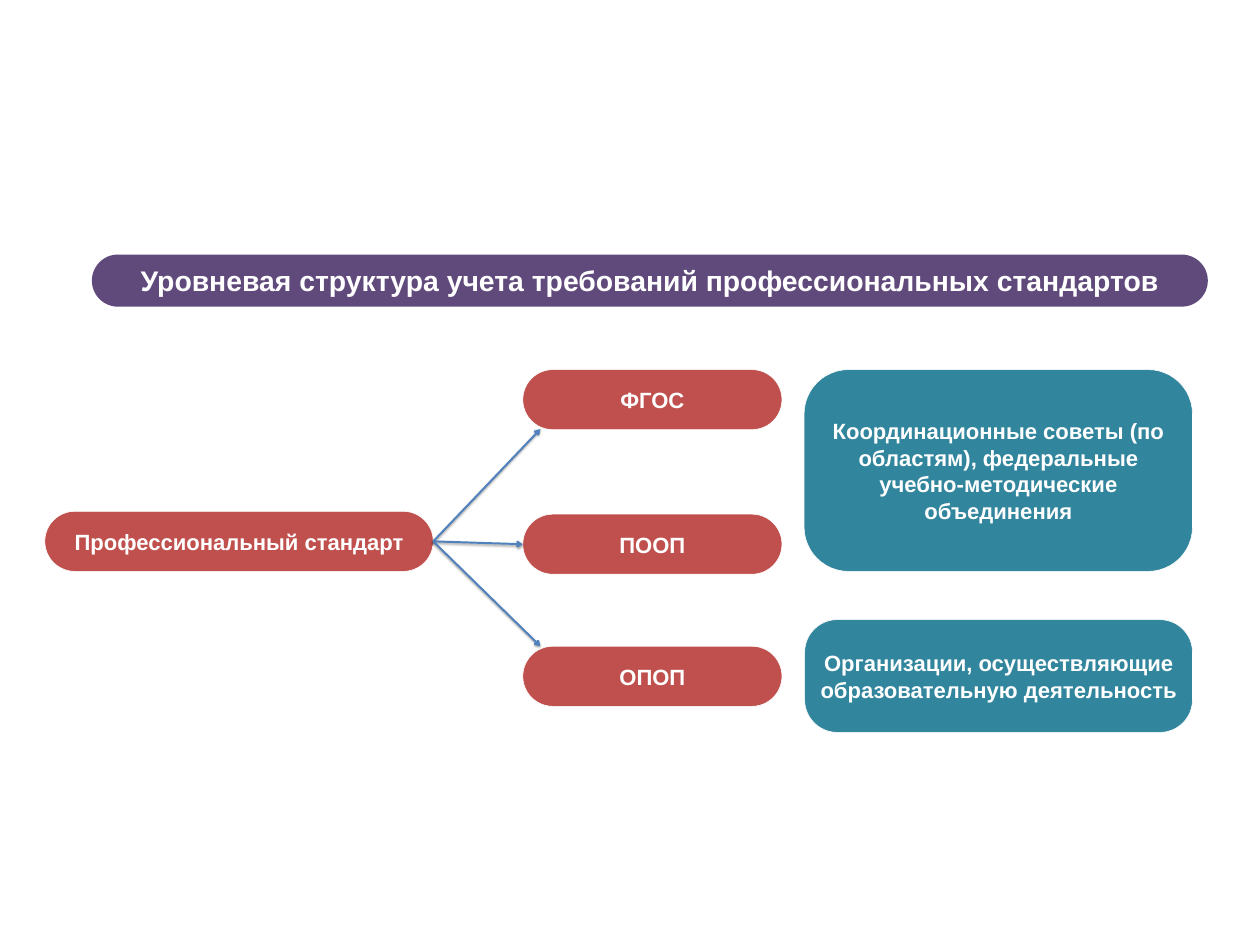
"""Build the slide on how professional standards feed education programmes."""
from lxml.etree import SubElement
from pptx import Presentation
from pptx.dml.color import RGBColor
from pptx.enum.shapes import MSO_CONNECTOR as Connector, MSO_SHAPE as Shape
from pptx.enum.text import MSO_ANCHOR as Anchor, MSO_AUTO_SIZE as AutoSize, PP_ALIGN as Align
from pptx.oxml.ns import qn
from pptx.util import Pt

PX = 9144
FONT = "Arial"
COLORS = {
    "title": "604A7B",
    "document": "C0504D",
    "body": "31859C",
    "arrow": "4F81BD",
    "light": "FFFFFF",
    "shadow": "000000",
}
TITLE = "Уровневая структура учета требований профессиональных стандартов"
TITLE_AREA = (162, 449, 1968, 92)
STANDARD = ("Профессиональный стандарт", (79, 902, 685, 106))
PROGRAMMES = [("ФГОС", 652), ("ПООП", 907), ("ОПОП", 1140)]
BODIES = [
    ("Координационные советы (по областям), федеральные учебно-методические объединения",
     (1418, 652, 685, 356), 0.22),
    ("Организации, осуществляющие образовательную деятельность",
     (1419, 1093, 684, 199), 0.29),
]
ARROW_START = (764, 955)
ARROW_ENDS = [(953, 757), (922, 960), (953, 1140)]


def color(name):
    """Return the named colour."""
    return RGBColor.from_string(COLORS[name])


def emu(lengths):
    """Turn px lengths into EMU."""
    return [length * PX for length in lengths]


def write(box, text, size):
    """Put bold, light, centred text in a shape."""
    frame = box.text_frame
    frame.word_wrap = True
    frame.auto_size = AutoSize.NONE
    frame.vertical_anchor = Anchor.MIDDLE
    para = frame.paragraphs[0]
    para.alignment = Align.CENTER
    span = para.add_run()
    span.text = text
    span.font.name = FONT
    span.font.size = Pt(size)
    span.font.bold = True
    span.font.color.rgb = color("light")


def add_pill(page, area, fill, rounding=0.5):
    """Add a filled rounded rectangle."""
    box = page.shapes.add_shape(Shape.ROUNDED_RECTANGLE, *emu(area))
    box.adjustments[0] = rounding
    box.shadow.inherit = False
    box.fill.solid()
    box.fill.fore_color.rgb = color(fill)
    box.line.fill.background()
    return box


def add_box(page, text, area, fill, rounding=0.5):
    """Add a labelled rounded rectangle with a thin light outline."""
    box = add_pill(page, area, fill, rounding)
    box.line.color.rgb = color("light")
    box.line.width = Pt(0.75)
    write(box, text, 28)


def add_title(page):
    """Place the title on its coloured bar."""
    add_pill(page, TITLE_AREA, "title")
    title = page.shapes.title
    title.left, title.top, title.width, title.height = emu(TITLE_AREA)
    write(title, TITLE, 36)
    page.shapes._spTree.append(title._element)


def add_arrow(page, start, end):
    """Add an arrow with a soft shadow."""
    arrow = page.shapes.add_connector(Connector.STRAIGHT, *emu(start + end))
    arrow.line.color.rgb = color("arrow")
    arrow.line.width = Pt(2.5)
    SubElement(arrow.line._get_or_add_ln(), qn("a:tailEnd"), type="arrow")
    effects = SubElement(arrow._element.spPr, qn("a:effectLst"))
    shadow = SubElement(effects, qn("a:outerShdw"), blurRad=str(Pt(3.1)),
                        dist=str(Pt(1.6)), dir="5400000", rotWithShape="0")
    tint = SubElement(shadow, qn("a:srgbClr"), val=COLORS["shadow"])
    SubElement(tint, qn("a:alpha"), val="38000")


def main():
    """Build and save the deck."""
    deck = Presentation()
    deck.slide_width, deck.slide_height = emu((2222, 1667))
    page = deck.slides.add_slide(deck.slide_layouts[5])
    add_title(page)
    for text, area, rounding in BODIES:
        add_box(page, text, area, "body", rounding)
    for text, top in PROGRAMMES:
        add_box(page, text, (922, top, 457, 106), "document")
    add_box(page, *STANDARD, "document")
    for end in ARROW_ENDS:
        add_arrow(page, ARROW_START, end)
    deck.save("out.pptx")


if __name__ == "__main__":
    main()
